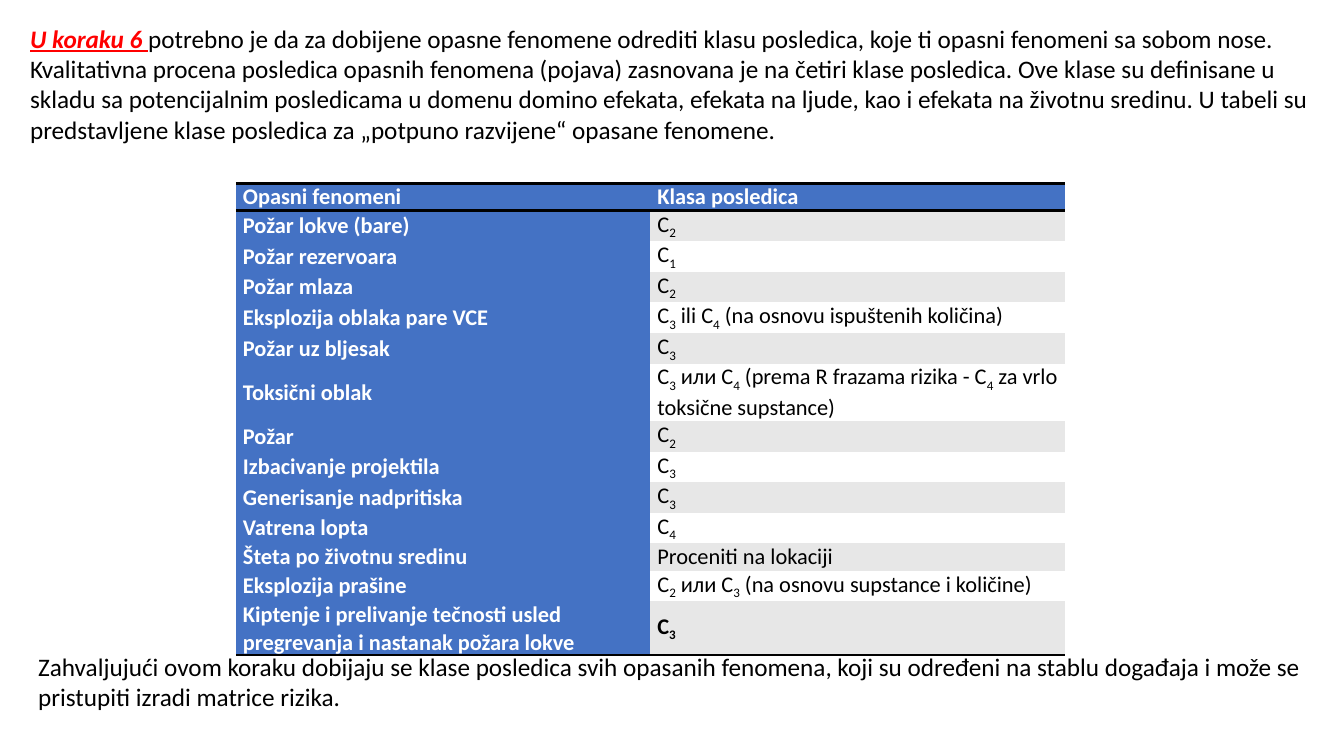
from lxml import etree
from pptx import Presentation
from pptx.dml.color import RGBColor
from pptx.enum import text as t
from pptx.oxml import ns
from pptx.util import Inches, Pt

LEAD = "U koraku 6 "
INTRO = (
    "potrebno je da za dobijene opasne fenomene odrediti klasu posledica, "
    "koje ti opasni fenomeni sa sobom nose. Kvalitativna procena posledica "
    "opasnih fenomena (pojava) zasnovana je na četiri klase posledica. Ove "
    "klase su definisane u skladu sa potencijalnim posledicama u domenu domino "
    "efekata, efekata na ljude, kao i efekata na životnu sredinu. U tabeli su "
    "predstavljene klase posledica za „potpuno razvijene“ opasane fenomene."
)
CLOSE = (
    "Zahvaljujući ovom koraku dobijaju se klase posledica svih opasanih "
    "fenomena, koji su određeni na stablu događaja i može se pristupiti "
    "izradi matrice rizika."
)
# An underscore makes the next character a subscript.
ROWS = [
    ("Opasni fenomeni", "Klasa posledica"),
    ("Požar lokve (bare)", "C_2"),
    ("Požar rezervoara", "C_1"),
    ("Požar mlaza", "C_2"),
    ("Eksplozija oblaka pare VCE", "C_3 ili C_4 (na osnovu ispuštenih količina)"),
    ("Požar uz bljesak", "C_3"),
    ("Toksični oblak",
     "C_3 или C_4 (prema R frazama rizika - C_4 za vrlo toksične supstance)"),
    ("Požar", "C_2"),
    ("Izbacivanje projektila", "C_3"),
    ("Generisanje nadpritiska", "C_3"),
    ("Vatrena lopta", "C_4"),
    ("Šteta po životnu sredinu", "Proceniti na lokaciji"),
    ("Eksplozija prašine", "C_2 или C_3 (na osnovu supstance i količine)"),
    ("Kiptenje i prelivanje tečnosti usled pregrevanja i nastanak požara lokve",
     "C_3"),
]
COLORS = {"ink": "000000", "lead": "FF0000", "head": "4472C4",
          "band": "E7E7E7", "white": "FFFFFF"}
PLAIN_STYLE = "{2D5ABB26-0587-4C30-8999-92F81FD0307C}"


def add_text(para, words, size=18, color="ink", bold=False, italic=False,
             line=False, sub=False):
    run = para.add_run()
    run.text = words
    font = run.font
    font.name, font.size = "Calibri", Pt(size)
    font.bold, font.italic, font.underline = bold, italic, line
    font.color.rgb = RGBColor.from_string(COLORS[color])
    if sub:
        run._r.get_or_add_rPr().set("baseline", "-25000")


def add_marked(para, words, **form):
    """Write words, lowering each character that follows an underscore."""
    first, *rest = words.split("_")
    add_text(para, first, **form)
    for part in rest:
        add_text(para, part[0], sub=True, **form)
        if part[1:]:
            add_text(para, part[1:], **form)


def add_box(slide, left, top, width, height):
    box = slide.shapes.add_textbox(*map(Inches, (left, top, width, height)))
    frame = box.text_frame
    frame.word_wrap = True
    frame.auto_size = t.MSO_AUTO_SIZE.SHAPE_TO_FIT_TEXT
    return frame.paragraphs[0]


def add_rule(cell, side):
    line = etree.SubElement(cell._tc.get_or_add_tcPr(), ns.qn("a:ln" + side),
                            w=str(Pt(2)))
    fill = etree.SubElement(line, ns.qn("a:solidFill"))
    etree.SubElement(fill, ns.qn("a:srgbClr"), val=COLORS["ink"])


def fill_cell(cell, words, row, col):
    top, last = row == 0, row == len(ROWS) - 1
    dark = top or col == 0
    if top:
        add_rule(cell, "T")
    if top or last:
        add_rule(cell, "B")
    tone = "head" if dark else "band" if row % 2 else "white"
    cell.fill.solid()
    cell.fill.fore_color.rgb = RGBColor.from_string(COLORS[tone])
    cell.margin_left = cell.margin_right = Inches(0.07)
    cell.margin_top = cell.margin_bottom = 0
    para = cell.text_frame.paragraphs[0]
    if top:
        para.alignment = t.PP_ALIGN.JUSTIFY
    else:
        cell.vertical_anchor = t.MSO_ANCHOR.MIDDLE
    add_marked(para, words, size=16, bold=dark or last,
               color="white" if dark else "ink")


def add_grid(slide):
    frame = slide.shapes.add_table(len(ROWS), 2, Inches(2.34), Inches(1.82),
                                   Inches(8.22), Inches(3.78))
    table = frame.table
    table._tbl.tblPr.find(ns.qn("a:tableStyleId")).text = PLAIN_STYLE
    for row, pair in enumerate(ROWS):
        for col, words in enumerate(pair):
            fill_cell(table.cell(row, col), words, row, col)


def main():
    deck = Presentation()
    deck.slide_width, deck.slide_height = Inches(13.33), Inches(7.5)
    slide = deck.slides.add_slide(deck.slide_layouts[6])
    intro = add_box(slide, 0.2, 0.18, 12.9, 1.31)
    add_text(intro, LEAD, color="lead", bold=True, italic=True, line=True)
    add_text(intro, INTRO)
    add_grid(slide)
    add_text(add_box(slide, 0.28, 6.41, 12.82, 0.71), CLOSE)
    deck.save("out.pptx")


if __name__ == "__main__":
    main()
